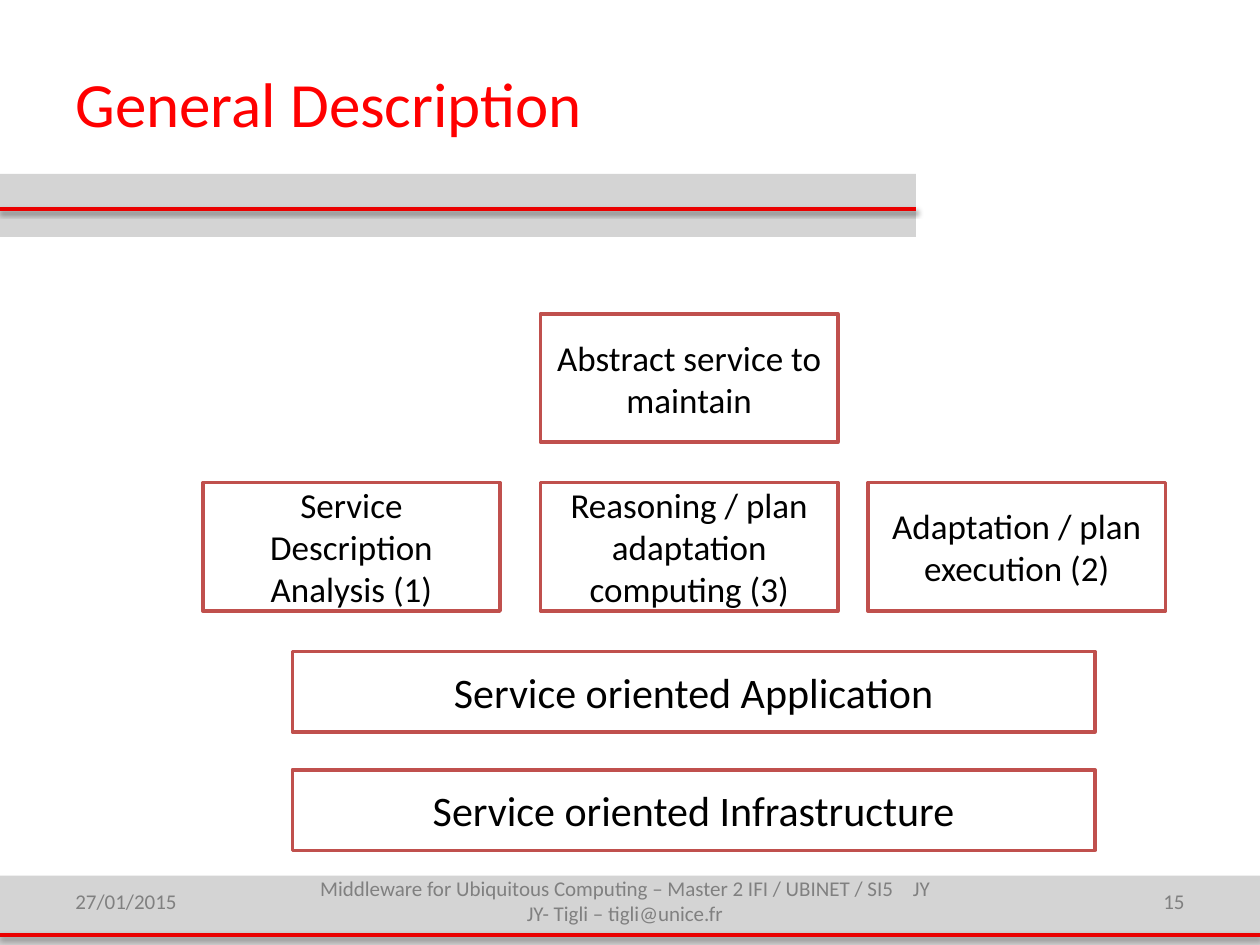
from lxml import etree
from pptx import Presentation, util as u
from pptx.dml.color import RGBColor
from pptx.enum import shapes, text
from pptx.oxml import ns

WIDTH, HEIGHT = 10, 7.5
FOOTER_TOP = 6.95
BAND_WIDTH = 7.27
GREY, RED, BORDER = "D4D4D4", "EA0000", "C0504D"
COLUMNS = (1.61, 4.29, 6.89)
ROWS = (2.49, 3.83)
BLOCK = (2.36, 1.02)
LAYERS_LEFT, LAYERS_TOP, LAYER_STEP = 2.32, 5.17, 0.94
LAYER = (6.37, 0.64)
LEFT, CENTER, RIGHT = text.PP_ALIGN.LEFT, text.PP_ALIGN.CENTER, text.PP_ALIGN.RIGHT


def color(hex_code):
    return RGBColor.from_string(hex_code)


def inches(*lengths):
    return [u.Inches(length) for length in lengths]


def write(shape, spans, size, hex_code, align):
    """Fill a shape with one paragraph of (words, letter spacing in points) spans."""
    frame = shape.text_frame
    frame.word_wrap = True
    frame.vertical_anchor = text.MSO_ANCHOR.MIDDLE
    para = frame.paragraphs[0]
    para.alignment = align
    for words, spacing in spans:
        span = para.add_run()
        span.text = words
        span.font.name = "Calibri"
        span.font.size = u.Pt(size)
        span.font.color.rgb = color(hex_code)
        if spacing:
            span._r.get_or_add_rPr().set("spc", str(spacing * 100))


def add_text(page, place, spans, size, hex_code, align=LEFT):
    write(page.shapes.add_textbox(*inches(*place)), spans, size, hex_code, align)


def add_rectangle(page, place, fill, border=None):
    box = page.shapes.add_shape(shapes.MSO_SHAPE.RECTANGLE, *inches(*place))
    box.shadow.inherit = False
    box.fill.solid()
    box.fill.fore_color.rgb = color(fill)
    if border:
        box.line.color.rgb = color(border)
        box.line.width = u.Pt(2)
    else:
        box.line.fill.background()
    return box


def add_box(page, place, words, size):
    box = add_rectangle(page, place, "FFFFFF", BORDER)
    write(box, [(words, 0)], size, "000000", CENTER)


def add_rule(page, right, top):
    """Draw a red line from the left edge, with a soft shadow below it."""
    rule = page.shapes.add_connector(shapes.MSO_CONNECTOR.STRAIGHT,
                                     *inches(right, top, 0, top))
    rule.line.color.rgb = color(RED)
    rule.line.width = u.Pt(2)
    effects = etree.SubElement(rule._element.spPr, ns.qn("a:effectLst"))
    shadow = etree.SubElement(effects, ns.qn("a:outerShdw"), blurRad=str(u.Pt(3)),
                              dist=str(u.Pt(1.6)), dir="5400000", rotWithShape="0")
    tint = etree.SubElement(shadow, ns.qn("a:srgbClr"), val="000000")
    etree.SubElement(tint, ns.qn("a:alpha"), val="38000")


def add_footer(page):
    course = [("Middleware for Ubiquitous Computing – Master 2 IFI / UBINET / SI5", 0),
              (" ", 8), ("JY JY- Tigli – tigli@unice.fr", 0)]
    for left, width, spans, align in (
            (0.5, 1.14, [("27/01/2015", 0)], LEFT),
            (2.42, 5.08, course, CENTER),
            (8.36, 1.14, [("15", 0)], RIGHT)):
        add_text(page, (left, FOOTER_TOP, width, 0.4), spans, 12, "808080", align)


def main():
    deck = Presentation()
    deck.slide_width, deck.slide_height = inches(WIDTH, HEIGHT)
    page = deck.slides.add_slide(deck.slide_layouts[6])

    add_rectangle(page, (0, FOOTER_TOP, WIDTH, HEIGHT - FOOTER_TOP), GREY)
    add_rectangle(page, (0, 1.38, BAND_WIDTH, 0.5), GREY)
    add_rule(page, BAND_WIDTH, 1.66)
    add_rule(page, WIDTH, 7.42)
    add_text(page, (0.5, 0.3, 6.69, 1.03), [("General Description", 0)], 36, "FF0000")
    add_footer(page)

    for column, row, words in (
            (1, 0, "Abstract service to maintain"),
            (0, 1, "Service Description Analysis (1)"),
            (1, 1, "Reasoning / plan adaptation computing (3)"),
            (2, 1, "Adaptation / plan execution (2)")):
        add_box(page, (COLUMNS[column], ROWS[row], *BLOCK), words, 20)
    for index, layer in enumerate(("Application", "Infrastructure")):
        place = (LAYERS_LEFT, LAYERS_TOP + index * LAYER_STEP, *LAYER)
        add_box(page, place, f"Service oriented {layer}", 24)

    deck.save("out.pptx")


if __name__ == "__main__":
    main()
